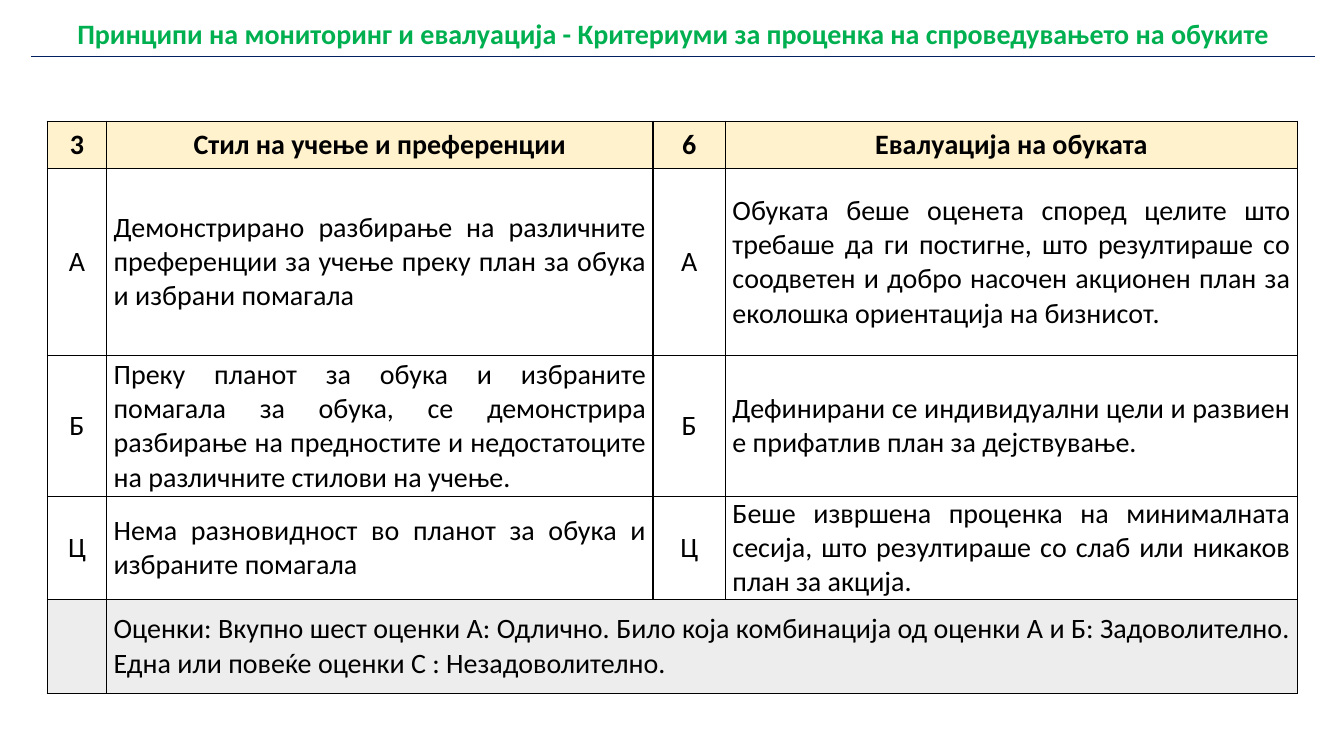
from dataclasses import dataclass

from lxml.etree import SubElement
from pptx import Presentation
from pptx.dml.color import RGBColor
from pptx.enum.text import MSO_ANCHOR, PP_ALIGN
from pptx.oxml.ns import qn
from pptx.util import Pt


@dataclass(frozen=True)
class Theme:
    """Colours and type of the slide."""
    font: str = "Calibri"
    size: float = 20
    title: str = "00B050"
    rule: str = "002060"
    text: str = "000000"
    paper: str = "FFFFFF"
    header: str = "FFF2CC"
    footer: str = "EDEDED"


THEME = Theme()
SIDES = ("L", "R", "T", "B")
TITLE = ("Принципи на мониторинг и евалуација - "
         "Критериуми за проценка на спроведувањето на обуките")
CRITERIA = [
    ("3", "Стил на учење и преференции", "6", "Евалуација на обуката"),
    ("А", "Демонстрирано разбирање на различните преференции за учење "
          "преку план за обука и избрани помагала",
     "А", "Обуката беше оценета според целите што требаше да ги постигне, "
          "што резултираше со соодветен и добро насочен акционен план за "
          "еколошка ориентација на бизнисот."),
    ("Б", "Преку планот за обука и избраните помагала за обука, се "
          "демонстрира разбирање на предностите и недостатоците на "
          "различните стилови на учење.",
     "Б", "Дефинирани се индивидуални цели и развиен е прифатлив план за "
          "дејствување."),
    ("Ц", "Нема разновидност во планот за обука и избраните помагала",
     "Ц", "Беше извршена проценка на минималната сесија, што резултираше со "
          "слаб или никаков план за акција."),
]
GRADING = ("Оценки: Вкупно шест оценки A: Одлично. Било која комбинација од "
           "оценки А и Б: Задоволително. Една или повеќе оценки C : "
           "Незадоволително.")


def add_plain_table(s, left, top, widths, heights):
    """Add a table without banding, sized by its columns and rows."""
    frame = s.shapes.add_table(len(heights), len(widths), Pt(left), Pt(top),
                               Pt(sum(widths)), Pt(sum(heights)))
    table = frame.table
    table.first_row = table.horz_banding = False
    for col, width in zip(table.columns, widths):
        col.width = Pt(width)
    for row, height in zip(table.rows, heights):
        row.height = Pt(height)
    return table


def style_cell(cell, borders, fill=None):
    """Give a cell its border colours (left, right, top, bottom) and fill."""
    tc_pr = cell._tc.get_or_add_tcPr()
    for side, color in zip(SIDES, borders):
        ln = SubElement(tc_pr, qn(f"a:ln{side}"), w=str(Pt(1)))
        SubElement(SubElement(ln, qn("a:solidFill")), qn("a:srgbClr"),
                   val=color)
    if fill:
        cell.fill.solid()
        cell.fill.fore_color.rgb = RGBColor.from_string(fill)
    else:
        cell.fill.background()


def write_cell(cell, text, align, color=THEME.text, bold=False):
    """Write one run of text in a cell."""
    p = cell.text_frame.paragraphs[0]
    p.alignment = align
    r = p.add_run()
    r.text = text
    r.font.name = THEME.font
    r.font.size = Pt(THEME.size)
    r.font.bold = bold
    r.font.color.rgb = RGBColor.from_string(color)


def add_title(s, left, top, width, height):
    """Draw the title with a rule below it."""
    cell = add_plain_table(s, left, top, [width], [height]).cell(0, 0)
    style_cell(cell, [THEME.paper] * 3 + [THEME.rule])
    write_cell(cell, TITLE, PP_ALIGN.CENTER, THEME.title, True)


def add_criteria(s, left, top, width, height):
    """Draw the criteria grid with its header and grading note."""
    widths = [width * part for part in (0.0475, 0.437, 0.058, 0.4575)]
    heights = [height * part for part in (0.084, 0.332, 0.25, 0.167, 0.167)]
    table = add_plain_table(s, left, top, widths, heights)
    last = len(heights) - 1
    fills = {0: THEME.header, last: THEME.footer}
    for i in range(len(heights)):
        for j in range(len(widths)):
            cell = table.cell(i, j)
            style_cell(cell, [THEME.text] * 4, fills.get(i))
            cell.vertical_anchor = MSO_ANCHOR.MIDDLE
            cell.margin_left = cell.margin_right = Pt(5)
            cell.margin_top = cell.margin_bottom = 0
            if i < last:
                centred = i == 0 or j % 2 == 0
                align = PP_ALIGN.CENTER if centred else PP_ALIGN.JUSTIFY
                write_cell(cell, CRITERIA[i][j], align, bold=i == 0)
    note = table.cell(last, 1)
    note.merge(table.cell(last, len(widths) - 1))
    write_cell(note, GRADING, PP_ALIGN.JUSTIFY)


def main():
    """Build and save the slide."""
    prs = Presentation()
    prs.slide_width, prs.slide_height = Pt(960), Pt(540)
    s = prs.slides.add_slide(prs.slide_layouts[6])
    add_title(s, left=22, top=8.8, width=918, height=24)
    add_criteria(s, left=33.8, top=86.6, width=893, height=402.5)
    prs.save("out.pptx")


if __name__ == "__main__":
    main()
